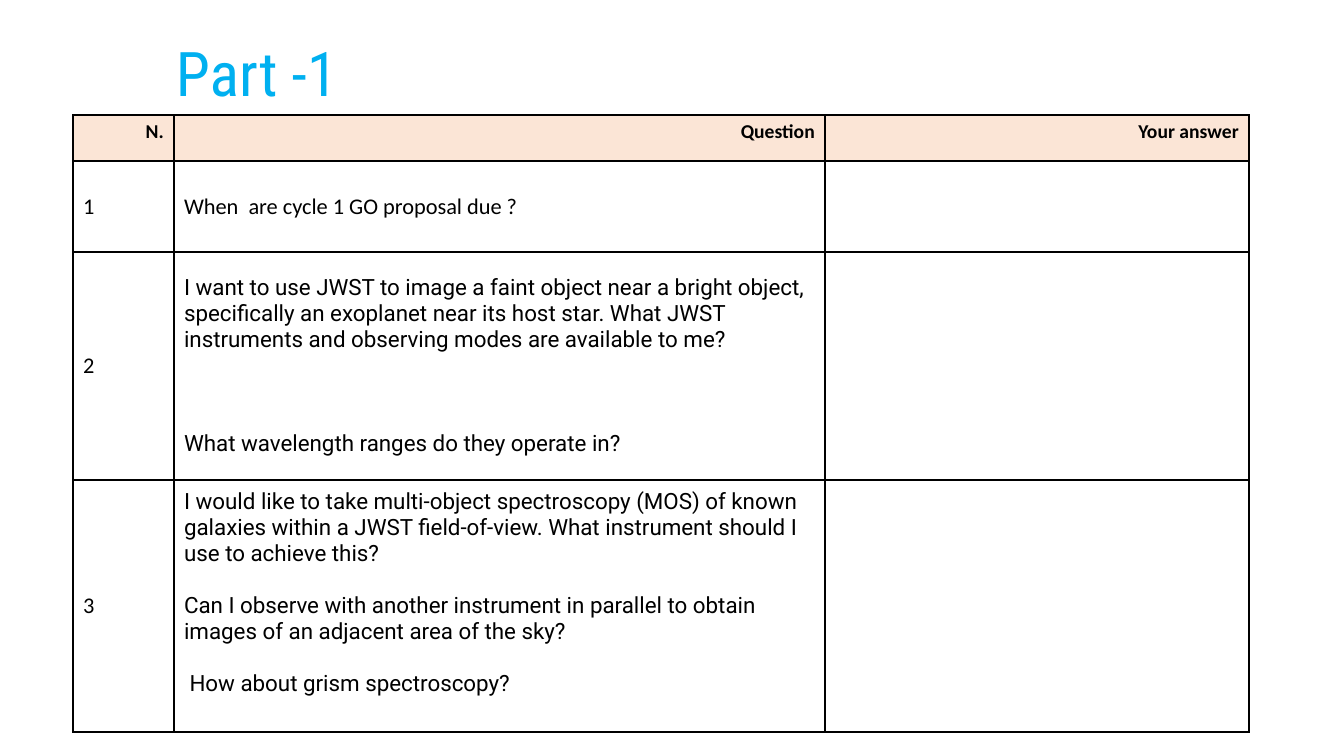
import lxml.etree
import pptx
import pptx.dml.color
import pptx.enum.text
import pptx.oxml.ns
import pptx.util

PX = 914400 / 100.8
LINE = 26
COLORS = {"title": "00B0F0", "text": "000000", "border": "000000", "header": "FBE5D6"}
ALIGN = pptx.enum.text.PP_ALIGN
ANCHOR = pptx.enum.text.MSO_ANCHOR

COLUMN_WIDTHS = [101, 651, 424]
ROW_HEIGHTS = [46, 91, 228, 252]
HEADERS = ["N.", "Question", "Your answer"]
# Each question: font, gap between paragraphs and space below in text lines, paragraphs
QUESTIONS = [
    ("Calibri", 0, 0, ["When  are cycle 1 GO proposal due ?"]),
    ("Roboto", 3, 0, [
        "I want to use JWST to image a faint object near a bright object, specifically "
        "an exoplanet near its host star. What JWST instruments and observing modes are "
        "available to me?",
        "What wavelength ranges do they operate in?",
    ]),
    ("Roboto", 1, 1, [
        "I would like to take multi-object spectroscopy (MOS) of known galaxies within a "
        "JWST field-of-view. What instrument should I use to achieve this?",
        "Can I observe with another instrument in parallel to obtain images of an "
        "adjacent area of the sky?",
        " How about grism spectroscopy?",
    ]),
]


def px(length):
    return pptx.util.Emu(round(length * PX))


def rgb(name):
    return pptx.dml.color.RGBColor.from_string(COLORS[name])


def add_run(paragraph, text, font, size, color="text", bold=False):
    run = paragraph.add_run()
    run.text = text
    run.font.name = font
    run.font.size = pptx.util.Pt(size)
    run.font.bold = bold
    run.font.color.rgb = rgb(color)


def write_cell(cell, paragraphs, font, size=16, bold=False, align=ALIGN.LEFT, gap=0):
    """Write paragraphs into a cell, separated by a gap counted in text lines."""
    for index, text in enumerate(paragraphs):
        frame = cell.text_frame
        paragraph = frame.add_paragraph() if index else frame.paragraphs[0]
        paragraph.alignment = align
        if index:
            paragraph.space_before = px(gap * LINE)
        add_run(paragraph, text, font, size, bold=bold)


def add_borders(cell):
    properties = cell._tc.get_or_add_tcPr()
    qn = pptx.oxml.ns.qn
    for side in ("lnL", "lnR", "lnT", "lnB"):
        line = lxml.etree.SubElement(properties, qn(f"a:{side}"), w=str(pptx.util.Pt(1)))
        fill = lxml.etree.SubElement(line, qn("a:solidFill"))
        lxml.etree.SubElement(fill, qn("a:srgbClr"), val=COLORS["border"])


def add_title(slide, left, top, width, height):
    box = slide.shapes.add_textbox(px(left), px(top), px(width), px(height))
    box.text_frame.word_wrap = True
    box.text_frame.margin_right = 0
    add_run(box.text_frame.paragraphs[0], "Part -1", "Roboto Condensed", 44, "title")


def add_question_table(slide, left, top):
    table = slide.shapes.add_table(
        len(ROW_HEIGHTS), len(COLUMN_WIDTHS), px(left), px(top),
        px(sum(COLUMN_WIDTHS)), px(sum(ROW_HEIGHTS))).table
    table.first_row = False
    table.horz_banding = False
    for column, width in zip(table.columns, COLUMN_WIDTHS):
        column.width = px(width)
    for row, height in zip(table.rows, ROW_HEIGHTS):
        row.height = px(height)

    for cell in table.iter_cells():
        add_borders(cell)
        cell.fill.background()
        cell.vertical_anchor = ANCHOR.MIDDLE

    for column, header in enumerate(HEADERS):
        cell = table.cell(0, column)
        cell.fill.solid()
        cell.fill.fore_color.rgb = rgb("header")
        cell.vertical_anchor = ANCHOR.TOP
        write_cell(cell, [header], "Calibri", 14, True, ALIGN.RIGHT)

    for number, (font, gap, below, paragraphs) in enumerate(QUESTIONS, 1):
        write_cell(table.cell(number, 0), [str(number)], "Calibri")
        question = table.cell(number, 1)
        question.margin_bottom = px(5 + below * LINE)
        write_cell(question, paragraphs, font, gap=gap)


def main():
    presentation = pptx.Presentation()
    presentation.slide_width = px(1344)
    presentation.slide_height = px(756)
    slide = presentation.slides.add_slide(presentation.slide_layouts[6])
    add_title(slide, 166, 30, 190, 85)
    add_question_table(slide, 73, 115)
    presentation.save("out.pptx")


if __name__ == "__main__":
    main()
